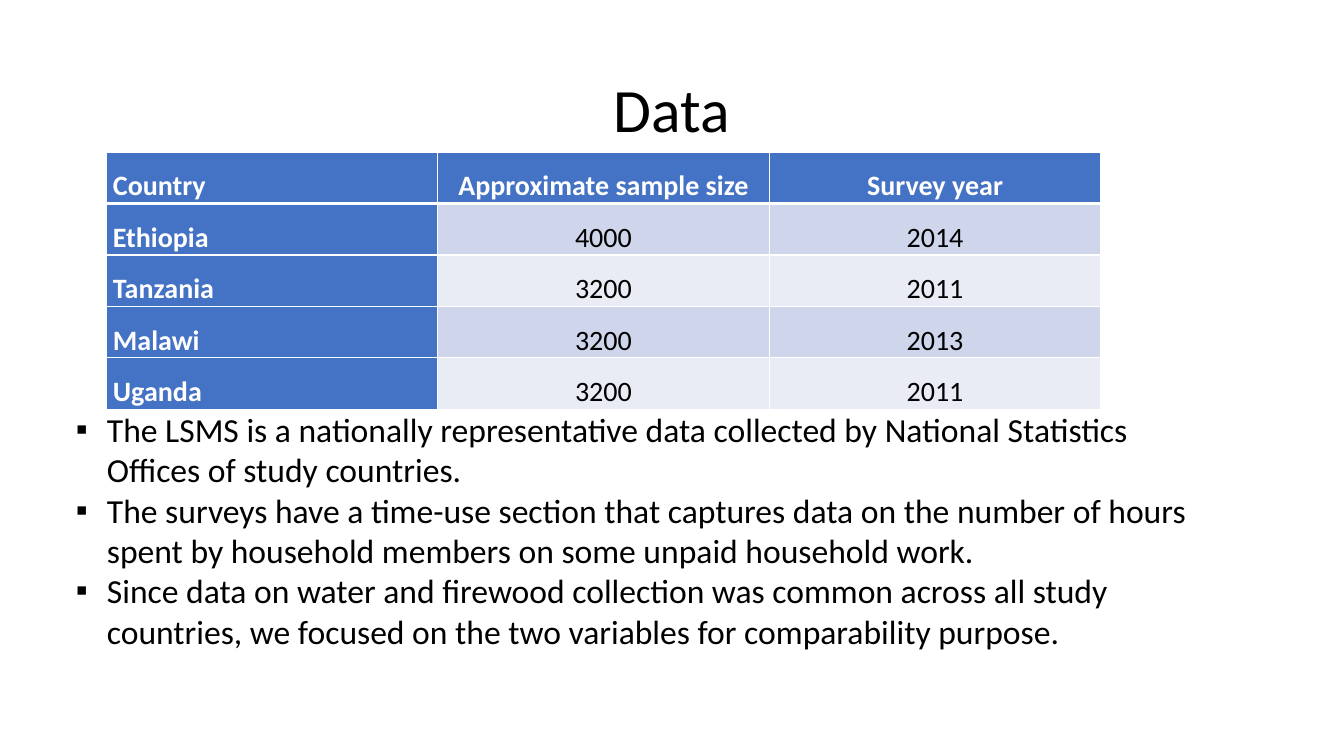
from dataclasses import dataclass
from lxml.etree import SubElement
from pptx import Presentation
from pptx.dml.color import RGBColor
from pptx.enum.text import MSO_ANCHOR, PP_ALIGN
from pptx.oxml import parse_xml
from pptx.oxml.ns import nsdecls, qn
from pptx.util import Emu, Pt


@dataclass(frozen=True)
class Theme:
    font: str = "Calibri"
    black: str = "000000"
    white: str = "FFFFFF"
    blue: str = "4472C4"
    bands: tuple = ("CFD5EA", "E9EBF5")
    title: int = 44
    body: int = 24
    cell: int = 20
    thin: int = 1
    thick: int = 3


THEME = Theme()
HEAD = ("Country", "Approximate sample size", "Survey year")
ROWS = (
    ("Ethiopia", "4000", "2014"),
    ("Tanzania", "3200", "2011"),
    ("Malawi", "3200", "2013"),
    ("Uganda", "3200", "2011"),
)
NOTES = (
    "The LSMS is a nationally representative data collected by National "
    "Statistics Offices of study countries.",
    "The surveys have a time-use section that captures data on the number of "
    "hours spent by household members on some unpaid household work.",
    "Since data on water and firewood collection was common across all study "
    "countries, we focused on the two variables for comparability purpose.",
)


def px(num):
    return Emu(round(num * 914400 / 100.8))


def write(para, text, size, color, bold=False):
    run = para.add_run()
    run.text = text
    run.font.name = THEME.font
    run.font.size = Pt(size)
    run.font.bold = bold
    run.font.color.rgb = RGBColor.from_string(color)


def add_title(slide, box, text):
    title = slide.shapes.title
    title.left, title.top, title.width, title.height = map(px, box)
    frame = title.text_frame
    frame.vertical_anchor = MSO_ANCHOR.MIDDLE
    para = frame.paragraphs[0]
    para.alignment = PP_ALIGN.CENTER
    para.line_spacing = 0.9
    write(para, text, THEME.title, THEME.black)


def set_edges(cell, row):
    widths = {
        "lnL": THEME.thin,
        "lnR": THEME.thin,
        "lnT": THEME.thick if row == 1 else THEME.thin,
        "lnB": THEME.thick if row == 0 else THEME.thin,
    }
    props = cell._tc.get_or_add_tcPr()
    for spot, (tag, width) in enumerate(widths.items()):
        props.insert(spot, parse_xml(
            f'<a:{tag} {nsdecls("a")} w="{Pt(width)}"><a:solidFill>'
            f'<a:srgbClr val="{THEME.white}"/></a:solidFill></a:{tag}>'
        ))


def fill_cell(cell, row, col, text):
    key = row == 0 or col == 0
    fill = THEME.blue if key else THEME.bands[(row - 1) % 2]
    cell.fill.solid()
    cell.fill.fore_color.rgb = RGBColor.from_string(fill)
    cell.margin_left = cell.margin_right = px(7)
    cell.margin_top = cell.margin_bottom = 0
    para = cell.text_frame.paragraphs[0]
    para.alignment = PP_ALIGN.CENTER if col else PP_ALIGN.JUSTIFY
    para.line_spacing = 1.5
    write(para, text, THEME.cell, THEME.white if key else THEME.black, key)
    set_edges(cell, row)


def add_grid(slide, box, rows):
    count = len(rows), len(rows[0])
    table = slide.shapes.add_table(*count, *map(px, box)).table
    for row, texts in enumerate(rows):
        for col, text in enumerate(texts):
            fill_cell(table.cell(row, col), row, col, text)


def add_notes(slide, box, notes):
    frame = slide.shapes.add_textbox(*map(px, box)).text_frame
    frame.word_wrap = True
    for spot, note in enumerate(notes):
        para = frame.add_paragraph() if spot else frame.paragraphs[0]
        props = para._p.get_or_add_pPr()
        props.set("marL", str(px(31)))
        props.set("indent", str(-px(31)))
        SubElement(props, qn("a:buFont"), typeface="Arial")
        SubElement(props, qn("a:buChar"), char="▪")
        write(para, note, THEME.body, THEME.black)


def main():
    deck = Presentation()
    deck.slide_width, deck.slide_height = px(1344), px(756)
    slide = deck.slides.add_slide(deck.slide_layouts[5])
    add_title(slide, (92, 40, 1159, 146), "Data")
    add_grid(slide, (106, 152, 995, 256), (HEAD, *ROWS))
    add_notes(slide, (66, 404, 1159, 256), NOTES)
    deck.save("out.pptx")


if __name__ == "__main__":
    main()
